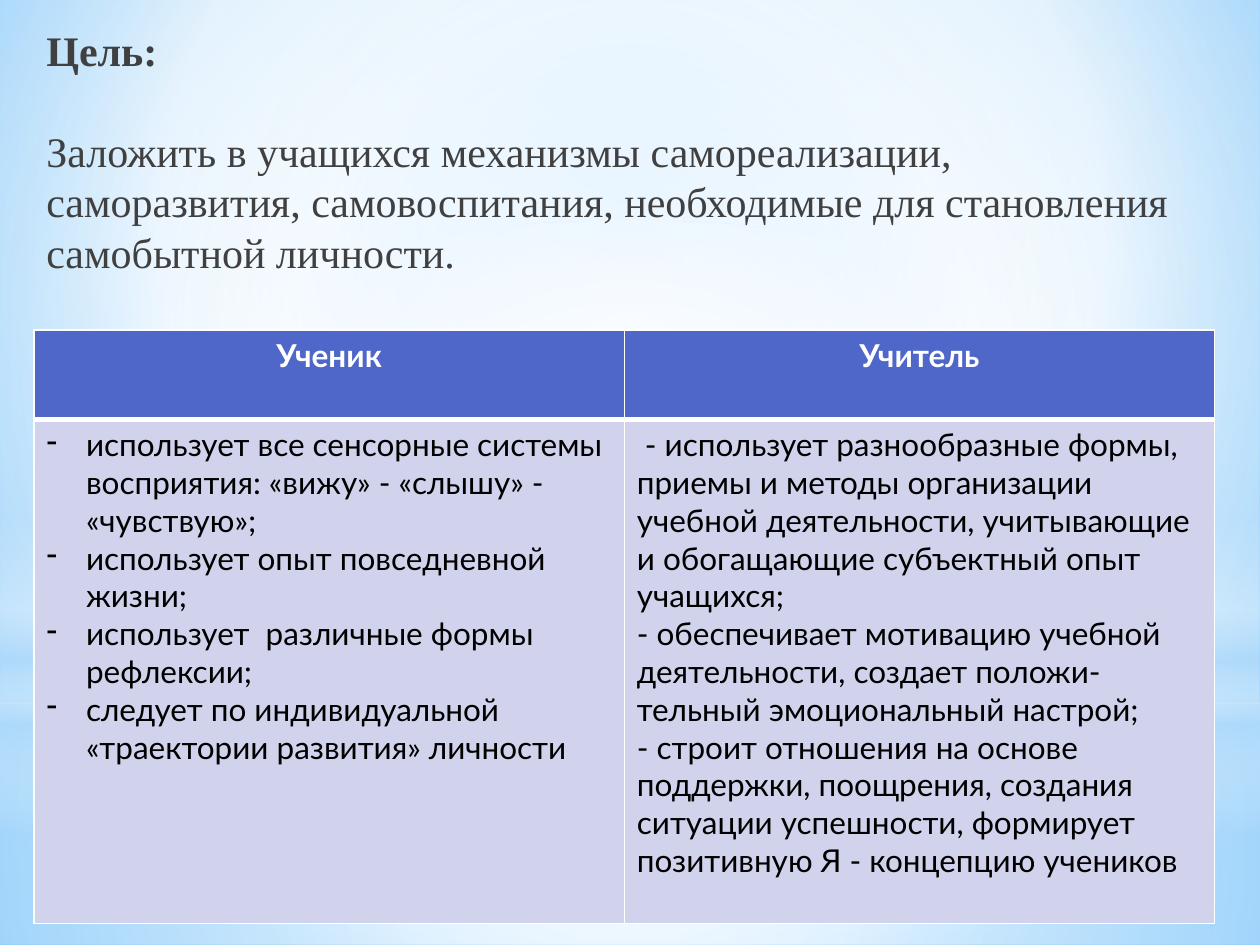
"""Build the lesson goal slide with its student and teacher table."""
from pptx import Presentation
from pptx.dml.color import RGBColor
from pptx.enum.shapes import MSO_SHAPE
from pptx.enum.text import MSO_ANCHOR, PP_ALIGN
from pptx.oxml import parse_xml
from pptx.oxml.ns import nsdecls, qn
from pptx.util import Pt

COLORS = {
    "white": "FFFFFF", "black": "000000", "title": "404040",
    "sky": "9ED5FF", "azure": "5BB9FF", "pale": "B4DCFA",
    "header": "4E67C8", "body": "D0D3EB",
}


def apply_gradient(element, stops, direction):
    """Replace the empty fill of an element with a gradient."""
    stop_xml = "".join(
        f'<a:gs pos="{position * 1000}"><a:srgbClr val="{COLORS[color]}">'
        f'<a:alpha val="{alpha * 1000}"/></a:srgbClr></a:gs>'
        for position, color, alpha in stops)
    empty_fill = next(element.iter(qn("a:noFill")))
    gradient = parse_xml(f'<a:gradFill {nsdecls("a")} rotWithShape="1">'
                         f"<a:gsLst>{stop_xml}</a:gsLst>{direction}</a:gradFill>")
    empty_fill.getparent().replace(empty_fill, gradient)


def write_paragraph(para, text, **font_values):
    """Add one run and set its font values."""
    span = para.add_run()
    span.text = text
    color = font_values.pop("color")
    for name, value in font_values.items():
        setattr(span.font, name, value)
    span.font.color.rgb = RGBColor.from_string(COLORS[color])


deck = Presentation()
deck.slide_width, deck.slide_height = Pt(720), Pt(540)
page = deck.slides.add_slide(deck.slide_layouts[6])

CIRCLE = '<a:path path="circle"><a:fillToRect l="{}" t="{}" r="{}" b="{}"/></a:path>'
CENTERED = CIRCLE.format(50000, 50000, 50000, 50000)
DOWNWARD = '<a:lin ang="5400000" scaled="0"/>'

page.background.fill.background()
apply_gradient(page.background.fill._xPr, [(0, "sky", 100), (60, "white", 100), (100, "azure", 100)],
               CIRCLE.format(20000, 10000, 20000, 60000))

glows = [
    (MSO_SHAPE.RECTANGLE, 401.76, 138.24, CENTERED,
     [(0, "white", 91), (37, "white", 76), (100, "pale", 79)]),
    (MSO_SHAPE.RECTANGLE, 0, 401.76, CENTERED,
     [(0, "white", 89), (48, "white", 62), (100, "pale", 79)]),
    (MSO_SHAPE.RECTANGLE, 296.64, 180, DOWNWARD,
     [(0, "white", 0), (29, "white", 30), (45, "pale", 40),
      (55, "white", 26), (65, "pale", 60), (100, "white", 0)]),
    (MSO_SHAPE.OVAL, 126, 401.76, CENTERED, [(0, "white", 100), (56, "white", 0)]),
]
for preset, top, height, direction, stops in glows:
    glow = page.shapes.add_shape(preset, 0, Pt(top), Pt(720), Pt(height))
    glow.shadow.inherit = False
    glow.fill.background()
    glow.line.fill.background()
    apply_gradient(glow.element.spPr, stops, direction)

box = page.shapes.add_textbox(Pt(19.44), Pt(10.08), Pt(674.64), Pt(156.96))
frame = box.text_frame
frame.word_wrap = True
frame.vertical_anchor = MSO_ANCHOR.TOP
goal = [
    ("Цель:", True, 0),
    ("Заложить в учащихся механизмы самореализации,", False, 28.9),
    ("саморазвития, самовоспитания, необходимые для становления "
     "самобытной личности.", False, 0),
]
for index, (text, bold, gap) in enumerate(goal):
    para = frame.add_paragraph() if index else frame.paragraphs[0]
    para.line_spacing = Pt(28.9)
    para.space_before = Pt(gap)
    write_paragraph(para, text, name="Times New Roman", size=Pt(24), bold=bold, color="title")

columns = [
    ("Ученик", True, [
        "использует все сенсорные системы восприятия: «вижу» - «слышу» - «чувствую»;",
        "использует опыт повседневной жизни;",
        "использует  различные формы рефлексии;",
        "следует по индивидуальной «траектории развития» личности",
    ]),
    ("Учитель", False, [
        " - использует разнообразные формы, приемы и методы организации учебной "
        "деятельности, учитывающие и обогащающие субъектный опыт учащихся;",
        "- обеспечивает мотивацию учебной деятельности, создает "
        "положи-тельный эмоциональный настрой;",
        "- строит отношения на основе поддержки, поощрения, создания ситуации "
        "успешности, формирует позитивную Я - концепцию учеников",
    ]),
]
table = page.shapes.add_table(2, 2, Pt(19.44), Pt(188.64), Pt(674.64), Pt(339)).table
for row, height in zip(table.rows, (51, 288)):
    row.height = Pt(height)

for column, (heading, bulleted, items) in enumerate(columns):
    table.columns[column].width = Pt(337.32)
    for row, texts in enumerate(([heading], items)):
        is_header = row == 0
        cell = table.cell(row, column)
        cell.fill.solid()
        cell.fill.fore_color.rgb = RGBColor.from_string(COLORS["header" if is_header else "body"])
        thick_side = "B" if is_header else "T"
        for position, side in enumerate("LRTB"):
            width = Pt(3 if side == thick_side else 1)
            cell._tc.tcPr.insert(position, parse_xml(
                f'<a:ln{side} {nsdecls("a")} w="{width}"><a:solidFill>'
                f'<a:srgbClr val="{COLORS["white"]}"/></a:solidFill></a:ln{side}>'))
        for index, text in enumerate(texts):
            para = cell.text_frame.add_paragraph() if index else cell.text_frame.paragraphs[0]
            para.alignment = PP_ALIGN.CENTER if is_header else PP_ALIGN.LEFT
            if bulleted and not is_header:
                properties = para._p.get_or_add_pPr()
                properties.set("marL", str(Pt(22.5)))
                properties.set("indent", str(Pt(-22.5)))
                properties.append(parse_xml(f'<a:buChar {nsdecls("a")} char="-"/>'))
            write_paragraph(para, text, name="Lato", size=Pt(18), bold=is_header,
                            color="white" if is_header else "black")

deck.save("out.pptx")
